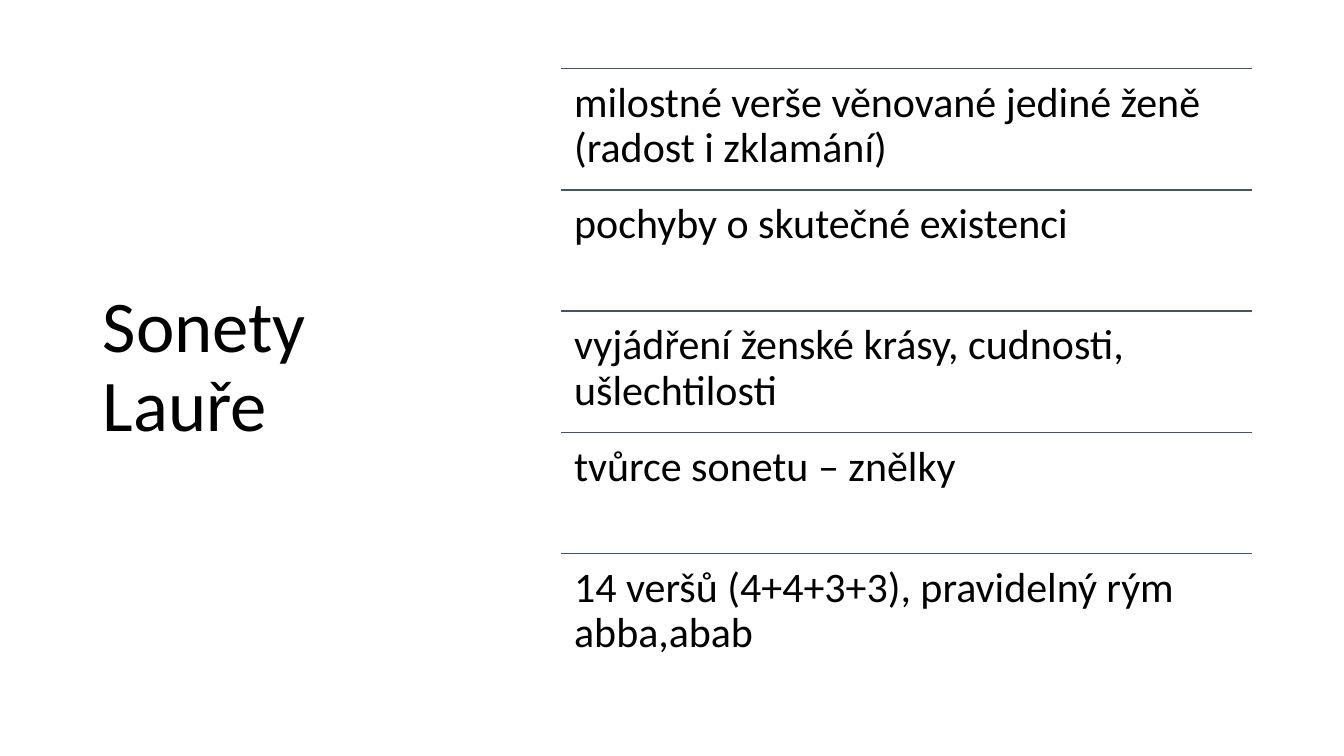
from lxml.etree import SubElement
from pptx import Presentation
from pptx.dml.color import RGBColor
from pptx.enum.shapes import MSO_CONNECTOR
from pptx.enum.text import MSO_ANCHOR, PP_ALIGN
from pptx.oxml.ns import qn
from pptx.util import Cm, Pt

FONT = "Calibri"
TEXT_COLOR = "000000"
RULE_COLOR = "44546A"
TITLE = "Sonety Lauře"
FEATURES = [
    "milostné verše věnované jediné ženě (radost i zklamání)",
    "pochyby o skutečné existenci",
    "vyjádření ženské krásy, cudnosti, ušlechtilosti",
    "tvůrce sonetu – znělky",
    "14 veršů (4+4+3+3), pravidelný rým abba,abab",
]


def color(hex_string):
    return RGBColor.from_string(hex_string)


def add_text(slide, text, left, top, width, height, size, anchor, insets):
    """Place one paragraph; insets are (horizontal, vertical) in cm."""
    box = slide.shapes.add_textbox(Cm(left), Cm(top), Cm(width), Cm(height))
    frame = box.text_frame
    frame.word_wrap = True
    frame.vertical_anchor = anchor
    frame.margin_left = frame.margin_right = Cm(insets[0])
    frame.margin_top = frame.margin_bottom = Cm(insets[1])
    paragraph = frame.paragraphs[0]
    paragraph.alignment = PP_ALIGN.LEFT
    paragraph.line_spacing = 0.9
    run = paragraph.add_run()
    run.text = text
    run.font.name = FONT
    run.font.size = Pt(size)
    run.font.color.rgb = color(TEXT_COLOR)


def add_rule(slide, left, top, width):
    rule = slide.shapes.add_connector(
        MSO_CONNECTOR.STRAIGHT, Cm(left), Cm(top), Cm(left + width), Cm(top))
    rule.line.color.rgb = color(RULE_COLOR)
    rule.line.width = Pt(1)
    SubElement(rule.element.spPr, qn("a:effectLst"))


def add_title(slide, left, top, width, height):
    add_text(slide, TITLE, left, top, width, height, 52,
             MSO_ANCHOR.MIDDLE, (0.25, 0.13))


def add_feature_list(slide, left, top, width, height):
    """Stack the features in equal rows, each under a rule."""
    row_height = height / len(FEATURES)
    for index, feature in enumerate(FEATURES):
        row_top = top + index * row_height
        add_rule(slide, left, row_top, width)
        add_text(slide, feature, left, row_top, width, row_height, 30,
                 MSO_ANCHOR.TOP, (0.32, 0.32))


def main():
    presentation = Presentation()
    presentation.slide_width = Cm(33.87)
    presentation.slide_height = Cm(19.05)
    slide = presentation.slides.add_slide(presentation.slide_layouts[6])
    add_title(slide, 2.34, 1.55, 9.37, 15.47)
    add_feature_list(slide, 14.15, 1.73, 17.4, 15.27)
    presentation.save("out.pptx")


if __name__ == "__main__":
    main()
